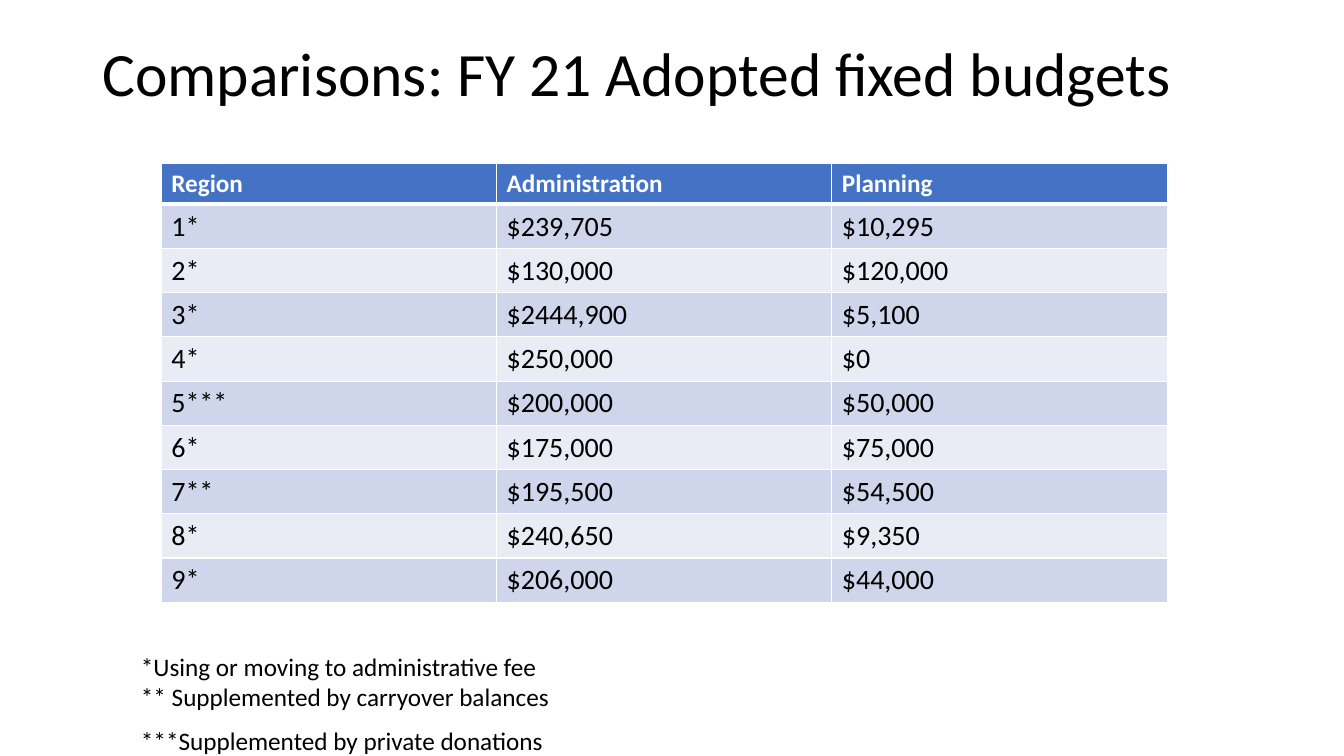
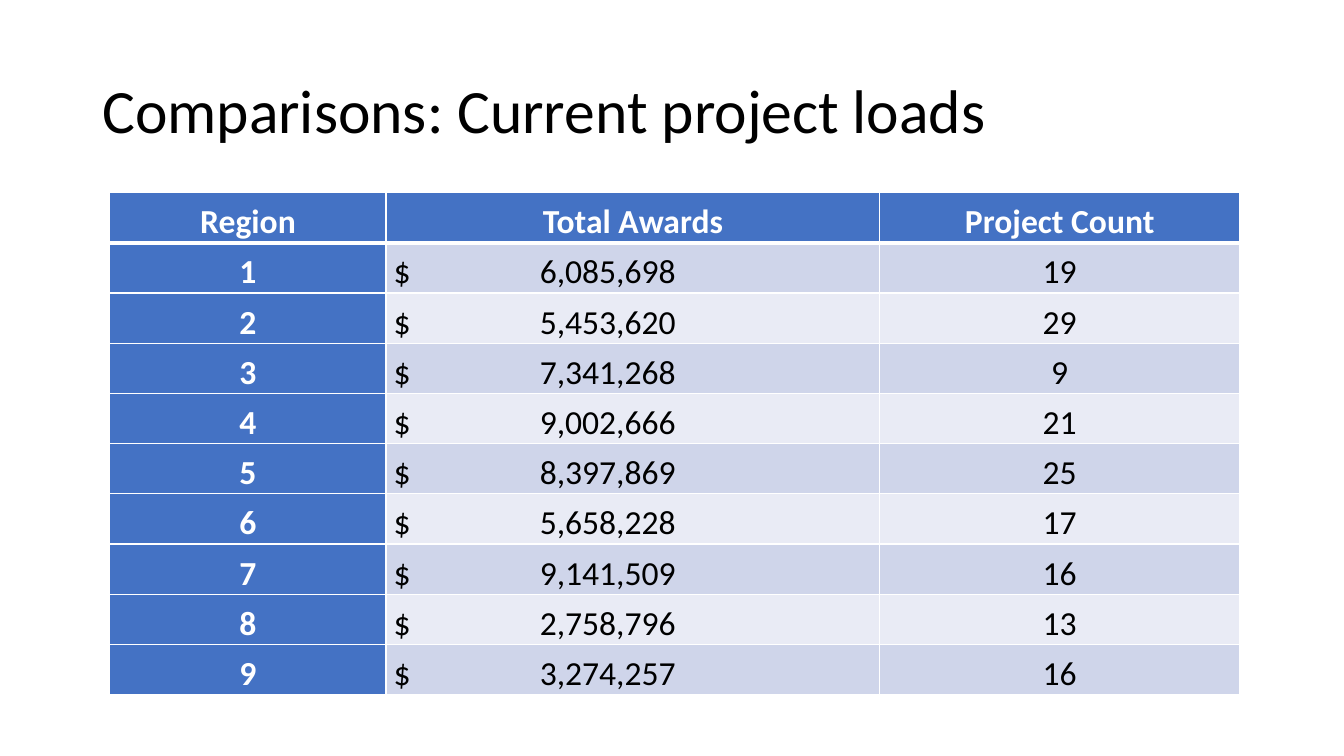
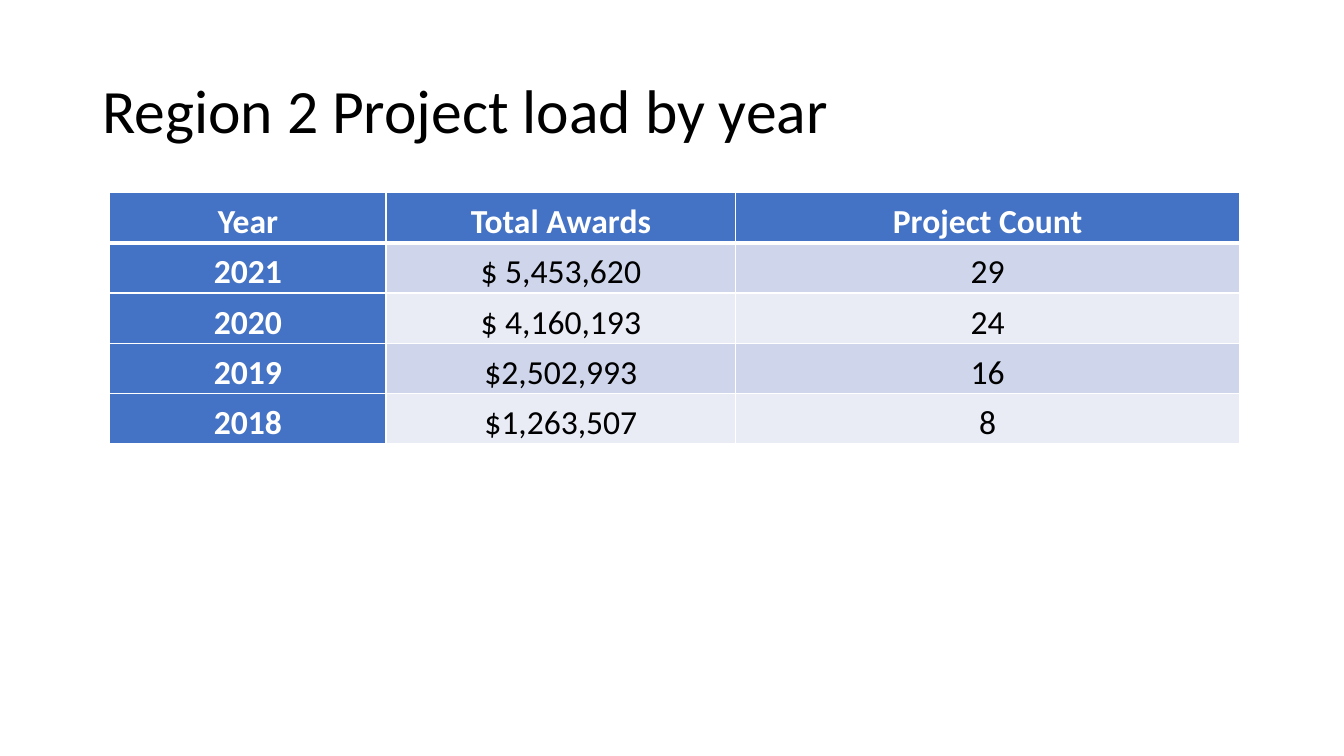
import pptx
import pptx.util
import pptx.dml.color
import pptx.enum.text
import pptx.oxml.ns
from lxml import etree

Pt = pptx.util.Pt
ALIGN = pptx.enum.text.PP_ALIGN
ANCHOR = pptx.enum.text.MSO_ANCHOR

BLACK, WHITE = "000000", "FFFFFF"
ACCENT, BAND_DARK, BAND_LIGHT = "4472C4", "CFD5EA", "E9EBF5"
TITLE_BOX = (66, 28.8, 828, 104.4)
AMOUNT_INDENT, AMOUNT_TAB = 5.4, 104.4

BUDGET_STYLE = {
    "header_size": 18, "body_size": 20, "align": ALIGN.LEFT, "label_column": False,
    "header_height": 29.2, "row_height": 31.6, "cell": {},
}
LOAD_STYLE = {
    "header_size": 24, "body_size": 24, "align": ALIGN.CENTER, "label_column": True,
    "header_height": 35.86, "row_height": 35.86,
    "cell": {"vertical_anchor": ANCHOR.BOTTOM, "margin_left": 0, "margin_top": 0,
             "margin_right": 0, "margin_bottom": 0},
}

BUDGETS = [
    ("Region", "Administration", "Planning"),
    ("1*", "$239,705", "$10,295"),
    ("2*", "$130,000", "$120,000"),
    ("3*", "$2444,900", "$5,100"),
    ("4*", "$250,000", "$0"),
    ("5***", "$200,000", "$50,000"),
    ("6*", "$175,000", "$75,000"),
    ("7**", "$195,500", "$54,500"),
    ("8*", "$240,650", "$9,350"),
    ("9*", "$206,000", "$44,000"),
]
BUDGET_NOTES = [
    ("*Using or moving to administrative fee", 0),
    ("** Supplemented by carryover balances", 0),
    ("***Supplemented by private donations", 10),
]
REGION_LOADS = [
    ("Region", "Total Awards", "Project Count"),
    ("1", "$\t6,085,698", "19"),
    ("2", "$\t5,453,620", "29"),
    ("3", "$\t7,341,268", "9"),
    ("4", "$\t9,002,666", "21"),
    ("5", "$\t8,397,869", "25"),
    ("6", "$\t5,658,228", "17"),
    ("7", "$\t9,141,509", "16"),
    ("8", "$\t2,758,796", "13"),
    ("9", "$\t3,274,257", "16"),
]
YEAR_LOADS = [
    ("Year", "Total Awards", "Project Count"),
    ("2021", "$ 5,453,620", "29"),
    ("2020", "$ 4,160,193", "24"),
    ("2019", "$2,502,993", "16"),
    ("2018", "$1,263,507", "8"),
]


def rgb(color):
    return pptx.dml.color.RGBColor.from_string(color)


def set_all(target, values):
    for name, value in values.items():
        setattr(target, name, value)


def write(p, text, size, color=BLACK, bold=False, **paragraph):
    """Add one formatted run to p; further keywords are paragraph attributes."""
    r = p.add_run()
    r.text = text
    set_all(r.font, {"name": "Calibri", "size": Pt(size), "bold": bold})
    r.font.color.rgb = rgb(color)
    set_all(p, paragraph)


def add_text_box(s, box, anchor):
    tf = s.shapes.add_textbox(*map(Pt, box)).text_frame
    set_all(tf, {"word_wrap": True, "vertical_anchor": anchor})
    return tf


def add_title_slide(prs, title, rise=0):
    """Add a slide with its title, raised by rise points."""
    s = prs.slides.add_slide(prs.slide_layouts[6])
    left, top, width, height = TITLE_BOX
    tf = add_text_box(s, (left, top - rise, width, height), ANCHOR.MIDDLE)
    write(tf.paragraphs[0], title, 44, line_spacing=0.9)
    return s


def add_notes(s, box, notes):
    tf = add_text_box(s, box, ANCHOR.TOP)
    for i, (text, gap) in enumerate(notes):
        p = tf.add_paragraph() if i else tf.paragraphs[0]
        write(p, text, 18, space_before=Pt(gap))


def add_child(parent, tag, **attributes):
    return etree.SubElement(parent, pptx.oxml.ns.qn(tag), attributes)


def set_borders(cell, top, bottom):
    """Draw white borders, 1 pt at the sides; they must precede the fill."""
    tc_pr = cell._tc.get_or_add_tcPr()
    sides = (("a:lnL", 1), ("a:lnR", 1), ("a:lnT", top), ("a:lnB", bottom))
    for i, (tag, width) in enumerate(sides):
        line = add_child(tc_pr, tag, w=str(Pt(width)))
        add_child(add_child(line, "a:solidFill"), "a:srgbClr", val=WHITE)
        tc_pr.insert(i, line)


def fill_cell(cell, text, row, col, style):
    header = row == 0
    strong = header or (style["label_column"] and col == 0)
    band = BAND_DARK if row % 2 else BAND_LIGHT
    cell.fill.solid()
    cell.fill.fore_color.rgb = rgb(ACCENT if strong else band)
    set_borders(cell, top=3 if row == 1 else 1, bottom=3 if header else 1)
    set_all(cell, style["cell"])
    p = cell.text_frame.paragraphs[0]
    tabbed = "\t" in text
    write(p, text, style["header_size" if header else "body_size"],
          WHITE if strong else BLACK, strong,
          alignment=ALIGN.LEFT if tabbed else style["align"])
    if tabbed:
        cell.margin_left = Pt(AMOUNT_INDENT)
        tabs = add_child(p._p.get_or_add_pPr(), "a:tabLst")
        add_child(tabs, "a:tab", pos=str(Pt(AMOUNT_TAB)), algn="l")


def add_data_table(s, left, top, widths, rows, style):
    heights = [style["header_height"]] + [style["row_height"]] * (len(rows) - 1)
    box = (left, top, sum(widths), sum(heights))
    table = s.shapes.add_table(len(rows), len(widths), *map(Pt, box)).table
    for column, width in zip(table.columns, widths):
        column.width = Pt(width)
    for i, (height, texts) in enumerate(zip(heights, rows)):
        table.rows[i].height = Pt(height)
        for j, text in enumerate(texts):
            fill_cell(table.cell(i, j), text, i, j, style)


def main():
    prs = pptx.Presentation()
    set_all(prs, {"slide_width": Pt(960), "slide_height": Pt(540)})

    s = add_title_slide(prs, "Comparisons: FY 21 Adopted fixed budgets", rise=26.4)
    add_notes(s, (93.6, 461.4, 828, 78.6), BUDGET_NOTES)
    add_data_table(s, 115.2, 116.7, [239.5] * 3, BUDGETS, BUDGET_STYLE)

    s = add_title_slide(prs, "Comparisons: Current project loads")
    add_data_table(s, 78.5, 137.5, [197.3, 352.7, 257], REGION_LOADS, LOAD_STYLE)

    s = add_title_slide(prs, "Region 2 Project load by year")
    add_data_table(s, 78.5, 137.5, [197.3, 249.7, 360], YEAR_LOADS, LOAD_STYLE)

    prs.save("out.pptx")


if __name__ == "__main__":
    main()
